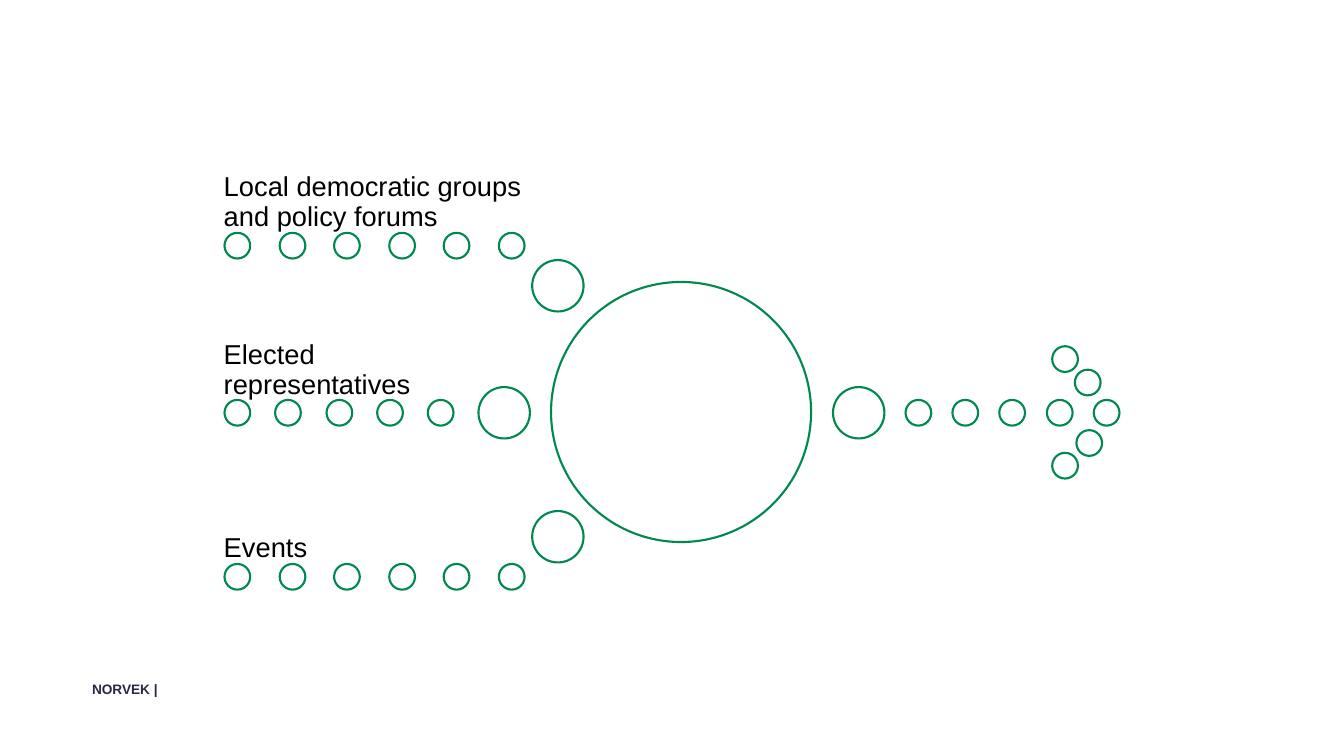
from pptx import Presentation
from pptx.dml.color import RGBColor
from pptx.enum.shapes import MSO_SHAPE
from pptx.enum.text import MSO_ANCHOR
from pptx.util import Emu, Pt

PX = 9144  # EMU per px, 100 px to the inch
WHITE = RGBColor(0xFF, 0xFF, 0xFF)
BLACK = RGBColor(0x00, 0x00, 0x00)
GREEN = RGBColor(0x00, 0x88, 0x4E)
NAVY = RGBColor(0x28, 0x28, 0x46)

DOT, NODE, HUB = 34, 68, 344  # circle diameters
LEFT = 297  # left edge of every input row
MIDDLE = 529  # top of the dots on the centre line

LABEL = {"name": "Arial", "size": Pt(26), "bold": False}
FOOTER = {"name": "Arial", "size": Pt(13), "bold": True}

# label, label width, label top, dot top, last dot left, dot count, node position
INPUTS = [
    ("Local democratic groups and policy forums", 399, 220, 308, 660, 6, (704, 344)),
    ("Elected representatives", 302, 442, MIDDLE, 566, 5, (633, 512)),
    ("Events", 399, 658, 746, 660, 6, (704, 676)),
]
ARROW_BARBS = [(1392, 458), (1392, 599), (1422, 489), (1424, 569)]


def px(length):
    return Emu(length * PX)


def add_circle(group, left, top, size):
    circle = group.shapes.add_shape(
        MSO_SHAPE.OVAL, px(left), px(top), px(size), px(size))
    circle.shadow.inherit = False
    circle.fill.solid()
    circle.fill.fore_color.rgb = WHITE
    circle.line.color.rgb = GREEN
    circle.line.width = Pt(2)


def add_dot_row(group, first, last, top, count):
    for step in range(count):
        left = round(first + (last - first) * step / (count - 1))
        add_circle(group, left, top, DOT)


def add_text(parent, text, left, top, width, height, style, color):
    box = parent.shapes.add_textbox(px(left), px(top), px(width), px(height))
    frame = box.text_frame
    frame.word_wrap = True
    para = frame.paragraphs[0]
    span = para.add_run()
    span.text = text
    for name, value in style.items():
        setattr(span.font, name, value)
    span.font.color.rgb = color
    return frame


def add_label(group, text, left, top, width):
    frame = add_text(group, text, left, top, width, 87, LABEL, BLACK)
    layout = {"margin_left": 0, "margin_right": 0, "margin_top": 0,
              "margin_bottom": 0, "vertical_anchor": MSO_ANCHOR.BOTTOM}
    for name, value in layout.items():
        setattr(frame, name, value)
    frame.paragraphs[0].line_spacing = 0.9


def main():
    deck = Presentation()
    deck.slide_width, deck.slide_height = px(1778), px(1000)
    page = deck.slides.add_slide(deck.slide_layouts[6])

    # Footer
    add_text(page, "NORVEK |", 112, 895, 157, 32, FOOTER, NAVY)

    group = page.shapes.add_group_shape()

    # Output arrow
    add_circle(group, 1102, 512, NODE)
    add_dot_row(group, 1198, 1447, MIDDLE, 5)
    for left, top in ARROW_BARBS:
        add_circle(group, left, top, DOT)

    # Central hub
    add_circle(group, 729, 373, HUB)

    # Input rows
    for text, width, label_top, dot_top, last, count, node in INPUTS:
        add_circle(group, *node, NODE)
        add_dot_row(group, LEFT, last, dot_top, count)
        add_label(group, text, LEFT - 1, label_top, width)

    deck.save("out.pptx")


if __name__ == "__main__":
    main()
